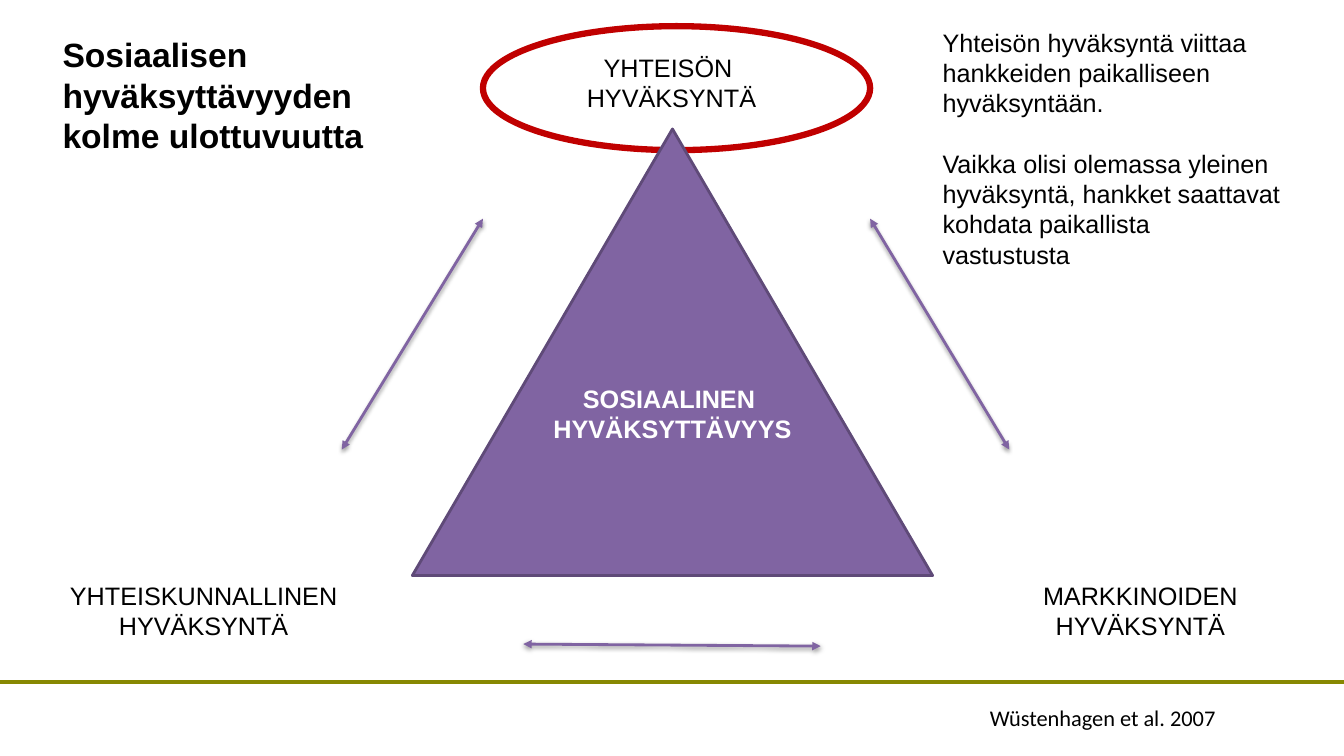
from dataclasses import dataclass

import pptx
import pptx.util
import pptx.dml.color
import pptx.enum.shapes
import pptx.enum.text
import pptx.oxml
import pptx.oxml.ns
import lxml.etree

Inches = pptx.util.Inches
Pt = pptx.util.Pt
ALIGN = pptx.enum.text.PP_ALIGN
SHAPE = pptx.enum.shapes.MSO_SHAPE

COLOURS = {
    "black": "000000",
    "white": "FFFFFF",
    "red": "C00000",
    "purple": "8064A2",
    "dark purple": "5F4A78",
    "olive": "878802",
}

SHADOW = (
    f'<a:effectLst {pptx.oxml.ns.nsdecls("a")}>'
    '<a:outerShdw blurRad="39370" dist="20320" dir="5400000" rotWithShape="0">'
    f'<a:srgbClr val="{COLOURS["black"]}"><a:alpha val="38000"/></a:srgbClr>'
    "</a:outerShdw></a:effectLst>"
)


@dataclass
class Figure:
    kind: SHAPE
    place: tuple[float, float, float, float]
    fill: str
    line: str
    weight: float


@dataclass
class Label:
    place: tuple[float, float, float, float]
    paragraphs: list[str]
    align: ALIGN = ALIGN.CENTER
    colour: str = "black"
    size: int = 18
    font: str = "Arial"
    bold: bool = False
    gap: float = 0


@dataclass
class Line:
    start: tuple[float, float]
    end: tuple[float, float]
    colour: str = "purple"
    weight: float = 2
    arrow: bool = True


TITLE = Label((0.52, 0.29, 3.4, 1.31), ["Sosiaalisen hyväksyttävyyden kolme ulottuvuutta"],
              ALIGN.LEFT, size=24, bold=True)

FIGURES = [
    Figure(SHAPE.OVAL, (4.79, 0.26, 3.84, 1.23), "white", "red", 4.5),
    Figure(SHAPE.ISOSCELES_TRIANGLE, (4.09, 1.28, 5.16, 4.43), "purple", "dark purple", 2),
]

LABELS = [
    Label((4.6, 0.47, 4.12, 0.71), ["YHTEISÖN \nHYVÄKSYNTÄ"]),
    Label((-0.04, 5.71, 4.12, 0.71), ["YHTEISKUNNALLINEN\nHYVÄKSYNTÄ"]),
    Label((9.25, 5.71, 4.12, 0.71), ["MARKKINOIDEN\nHYVÄKSYNTÄ"]),
    Label((4.61, 3.75, 4.12, 0.71), ["SOSIAALINEN \nHYVÄKSYTTÄVYYS"], colour="white", bold=True),
    Label((9.72, 6.94, 2.72, 0.37), ["Wüstenhagen et al. 2007"], ALIGN.LEFT, size=16, font="Calibri"),
    Label(
        (9.25, 0.22, 3.56, 2.52),
        [
            "Yhteisön hyväksyntä viittaa hankkeiden paikalliseen hyväksyntään.",
            "Vaikka olisi olemassa yleinen hyväksyntä, hankket saattavat kohdata paikallista vastustusta",
        ],
        ALIGN.LEFT,
        gap=21.6,
    ),
]

FOOTER_RULE = Line((0, 6.77), (13.33, 6.77), "olive", 2.83, False)

ARROWS = [
    Line((8.63, 2.17), (10.01, 4.46)),
    Line((4.79, 2.17), (3.39, 4.46)),
    Line((5.19, 6.39), (8.14, 6.41)),
]


def colour_of(name: str) -> pptx.dml.color.RGBColor:
    return pptx.dml.color.RGBColor.from_string(COLOURS[name])


def write_label(box, label: Label) -> None:
    box.left, box.top, box.width, box.height = map(Inches, label.place)
    frame = box.text_frame
    frame.word_wrap = True
    frame.auto_size = pptx.enum.text.MSO_AUTO_SIZE.SHAPE_TO_FIT_TEXT
    frame.vertical_anchor = pptx.enum.text.MSO_ANCHOR.TOP
    for index, text in enumerate(label.paragraphs):
        para = frame.add_paragraph() if index else frame.paragraphs[0]
        para.text = text
        para.alignment = label.align
        para.space_before = Pt(label.gap if index else 0)
        for span in para.runs:
            span.font.name = label.font
            span.font.size = Pt(label.size)
            span.font.bold = label.bold
            span.font.color.rgb = colour_of(label.colour)


def add_label(page, label: Label) -> None:
    write_label(page.shapes.add_textbox(*map(Inches, label.place)), label)


def add_figure(page, figure: Figure) -> None:
    shape = page.shapes.add_shape(figure.kind, *map(Inches, figure.place))
    shape.shadow.inherit = False
    shape.fill.solid()
    shape.fill.fore_color.rgb = colour_of(figure.fill)
    shape.line.color.rgb = colour_of(figure.line)
    shape.line.width = Pt(figure.weight)


def add_line(page, line: Line) -> None:
    connector = page.shapes.add_connector(
        pptx.enum.shapes.MSO_CONNECTOR.STRAIGHT, *map(Inches, line.start + line.end)
    )
    connector.line.color.rgb = colour_of(line.colour)
    connector.line.width = Pt(line.weight)
    properties = connector.element.spPr
    if line.arrow:
        stroke = properties.find(pptx.oxml.ns.qn("a:ln"))
        for end in ("a:headEnd", "a:tailEnd"):
            lxml.etree.SubElement(stroke, pptx.oxml.ns.qn(end), type="triangle")
        properties.append(pptx.oxml.parse_xml(SHADOW))
    else:
        lxml.etree.SubElement(properties, pptx.oxml.ns.qn("a:effectLst"))


def main() -> None:
    deck = pptx.Presentation()
    deck.slide_width = Inches(13.33)
    deck.slide_height = Inches(7.5)
    page = deck.slides.add_slide(deck.slide_layouts.get_by_name("Title Only"))
    page.background.fill.solid()
    page.background.fill.fore_color.rgb = colour_of("white")
    write_label(page.shapes.title, TITLE)
    add_line(page, FOOTER_RULE)
    for figure in FIGURES:
        add_figure(page, figure)
    for label in LABELS:
        add_label(page, label)
    for arrow in ARROWS:
        add_line(page, arrow)
    deck.save("out.pptx")


if __name__ == "__main__":
    main()
